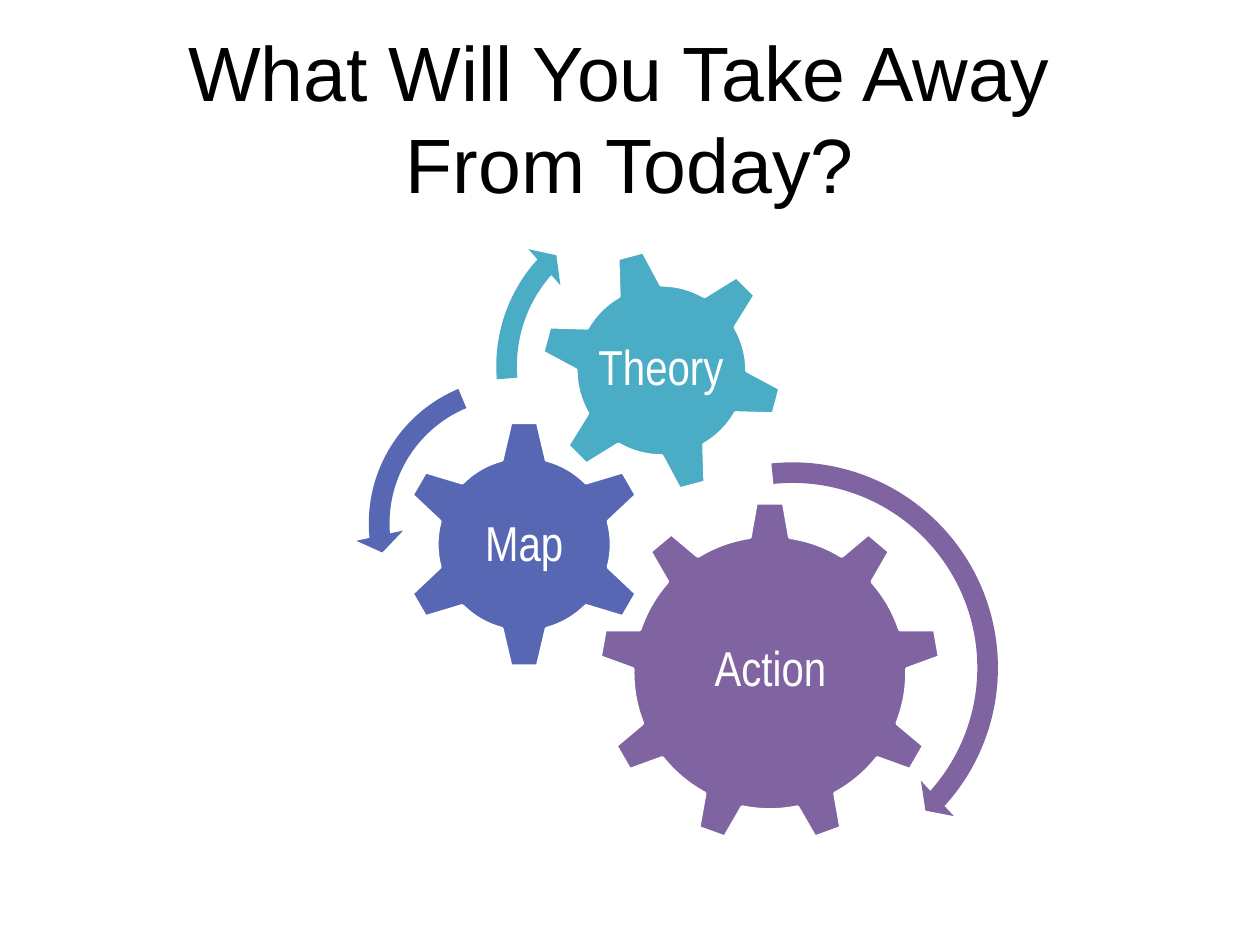
from pptx import Presentation
from pptx.dml.color import RGBColor
from pptx.enum.shapes import MSO_SHAPE
from pptx.enum.text import MSO_ANCHOR, PP_ALIGN
from pptx.util import Inches, Pt

GEAR6, GEAR9 = MSO_SHAPE.GEAR_6, MSO_SHAPE.GEAR_9
RIGHT, LEFT = MSO_SHAPE.CIRCULAR_ARROW, MSO_SHAPE.LEFT_CIRCULAR_ARROW
MIDDLE, CENTER = MSO_ANCHOR.MIDDLE, PP_ALIGN.CENTER

COLORS = {"purple": "8064A2", "blue": "5767B4", "teal": "4BACC6",
          "white": "FFFFFF", "black": "000000"}


def rgb(name):
    return RGBColor.from_string(COLORS[name])


def style(frame, text, font, size, color):
    """Write centred text in one font into a frame."""
    frame.text = text
    frame.word_wrap = True
    frame.vertical_anchor = MIDDLE
    for para in frame.paragraphs:
        para.alignment = CENTER
        for run in para.runs:
            for key, value in {"name": font, "size": Pt(size)}.items():
                setattr(run.font, key, value)
            run.font.color.rgb = rgb(color)


prs = Presentation()
prs.slide_width, prs.slide_height = Inches(10), Inches(7.5)
slide = prs.slides.add_slide(prs.slide_layouts[5])
shapes = slide.shapes

title = shapes.title
title.left, title.top = Inches(0.5), Inches(0.3)
title.width, title.height = Inches(9), Inches(1.25)
style(title.text_frame, "What Will You Take Away \vFrom Today?", "Arial", 44, "black")

# label, gear, colour, turn, gear left/top/size, label left/top/width/height
gears = [
    ("Action", GEAR9, "purple", 0, (4.75, 3.98, 2.72), (5.3, 4.62, 1.63, 1.4)),
    ("Map", GEAR6, "blue", 0, (3.17, 3.33, 1.98), (3.67, 3.84, 0.98, 0.98)),
    ("Theory", GEAR6, "teal", 345, (4.28, 1.97, 1.94), (4.7, 2.39, 1.09, 1.09)),
]
for label, kind, color, turn, (x, y, size), area in gears:
    gear = shapes.add_shape(kind, Inches(x), Inches(y), Inches(size), Inches(size))
    gear.rotation = turn
    gear.shadow.inherit = False
    gear.fill.solid()
    gear.fill.fore_color.rgb = rgb(color)
    gear.line.color.rgb = rgb("white")
    gear.line.width = Pt(2)

    frame = shapes.add_textbox(*map(Inches, area)).text_frame
    for side in ("left", "top", "right", "bottom"):
        setattr(frame, f"margin_{side}", Inches(0.04))
    style(frame, label, "Arial Narrow", 28, "white")
    frame.paragraphs[0].line_spacing = 0.9

# arrow, colour, left/top/size, adjustments
arrows = [
    (RIGHT, "purple", (4.55, 3.56, 3.48), (0.047, 2.99, 25.236, 158.454, 0.055)),
    (LEFT, "blue", (2.82, 2.89, 2.53), (0.065, 4.3, 104.891, 148.378, 0.075)),
    (RIGHT, "teal", (3.83, 1.54, 2.73), (0.06, 3.941, 133.138, 105.082, 0.07)),
]
for kind, color, (x, y, size), bends in arrows:
    arrow = shapes.add_shape(kind, Inches(x), Inches(y), Inches(size), Inches(size))
    for i, bend in enumerate(bends):
        arrow.adjustments[i] = bend
    arrow.shadow.inherit = False
    arrow.fill.solid()
    arrow.fill.fore_color.rgb = rgb(color)
    arrow.line.fill.background()

prs.save("out.pptx")
